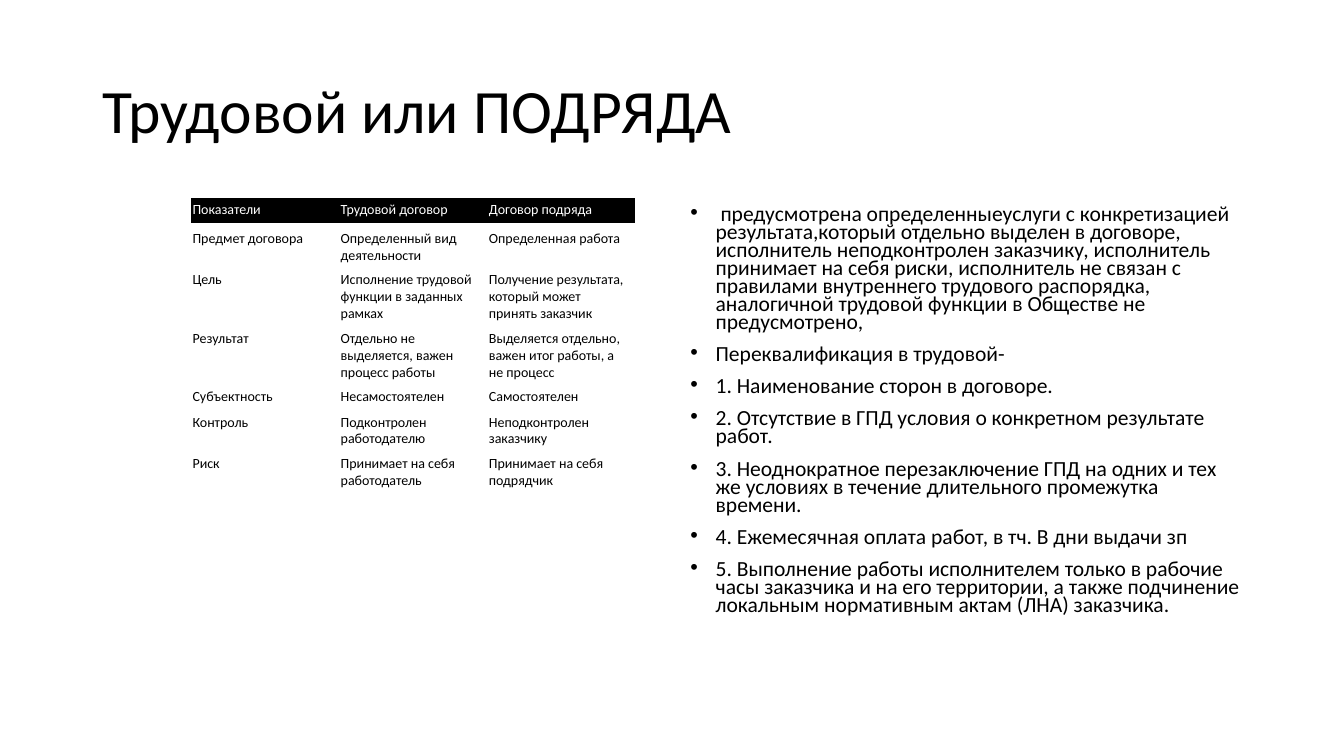
from pptx import Presentation
from pptx.dml.color import RGBColor
from pptx.enum.text import MSO_ANCHOR
from pptx.oxml.ns import qn
from pptx.util import Pt
from lxml import etree

PX = 9144
MIDDLE, TOP = MSO_ANCHOR.MIDDLE, MSO_ANCHOR.TOP
COLORS = {"black": "000000", "white": "FFFFFF"}
NO_STYLE = "{2D5ABB26-0587-4C30-8999-92F81FD0307C}"

ROWS = [
    ("Показатели", "Трудовой договор", "Договор подряда"),
    ("Предмет договора", "Определенный вид деятельности", "Определенная работа"),
    ("Цель", "Исполнение трудовой функции в заданных рамках",
     "Получение результата, который может принять заказчик"),
    ("Результат", "Отдельно не выделяется, важен процесс работы",
     "Выделяется отдельно, важен итог работы, а не процесс"),
    ("Субъектность", "Несамостоятелен", "Самостоятелен"),
    ("Контроль", "Подконтролен работодателю", "Неподконтролен заказчику"),
    ("Риск", "Принимает на себя работодатель", "Принимает на себя подрядчик"),
]
ROW_HEIGHTS = [25, 41, 58, 58, 25, 41, 41]
COLUMN_WIDTH = 147

POINTS = [
    " предусмотрена определенныеуслуги с конкретизацией результата,который отдельно "
    "выделен в договоре, исполнитель неподконтролен заказчику, исполнитель принимает "
    "на себя риски, исполнитель не связан с правилами внутреннего трудового "
    "распорядка, аналогичной трудовой функции в Обществе не предусмотрено,",
    "Переквалификация в трудовой-",
    "1. Наименование сторон в договоре.",
    "2. Отсутствие в ГПД условия о конкретном результате работ.",
    "3. Неоднократное перезаключение ГПД на одних и тех же условиях в течение "
    "длительного промежутка времени.",
    "4. Ежемесячная оплата работ, в тч. В дни выдачи зп",
    "5. Выполнение работы исполнителем только в рабочие часы заказчика и на его "
    "территории, а также подчинение локальным нормативным актам (ЛНА) заказчика.",
]


def add_text(p, text, size, color="black"):
    r = p.add_run()
    r.text = text
    r.font.name = "Calibri"
    r.font.size = Pt(size)
    r.font.color.rgb = RGBColor.from_string(COLORS[color])


def add_box(left, top, width, height, anchor):
    tf = s.shapes.add_textbox(left * PX, top * PX, width * PX, height * PX).text_frame
    tf.word_wrap = True
    tf.vertical_anchor = anchor
    return tf


prs = Presentation()
prs.slide_width, prs.slide_height = 1333 * PX, 750 * PX
s = prs.slides.add_slide(prs.slide_layouts[6])

p = add_box(92, 40, 1150, 145, MIDDLE).paragraphs[0]
p.line_spacing = 0.9
add_text(p, "Трудовой или ПОДРЯДА", 44)

table = s.shapes.add_table(len(ROWS), 3, 189 * PX, 196 * PX,
                           3 * COLUMN_WIDTH * PX, sum(ROW_HEIGHTS) * PX).table
table.first_row = table.horz_banding = False
table._tbl.tblPr.find(qn("a:tableStyleId")).text = NO_STYLE
for column in table.columns:
    column.width = COLUMN_WIDTH * PX
for i, (texts, height) in enumerate(zip(ROWS, ROW_HEIGHTS)):
    table.rows[i].height = height * PX
    header = i == 0
    fmt = {
        "vertical_anchor": MIDDLE if header else TOP,
        "margin_left": 2 * PX,
        "margin_top": (4 if header else 7) * PX,
        "margin_right": 7 * PX,
        "margin_bottom": (4 if header else 1) * PX,
    }
    for j, text in enumerate(texts):
        cell = table.cell(i, j)
        for name, value in fmt.items():
            setattr(cell, name, value)
        cell.fill.solid()
        cell.fill.fore_color.rgb = RGBColor.from_string(COLORS["black" if header else "white"])
        add_text(cell.text_frame.paragraphs[0], text, 10, "white" if header else "black")

tf = add_box(675, 200, 567, 476, TOP)
for i, text in enumerate(POINTS):
    p = tf.add_paragraph() if i else tf.paragraphs[0]
    p.line_spacing = 0.7
    p.space_before = Pt(10)
    add_text(p, text, 15.4)
    pPr = p._p.get_or_add_pPr()
    pPr.set("marL", str(25 * PX))
    pPr.set("indent", str(-25 * PX))
    etree.SubElement(pPr, qn("a:buFont")).set("typeface", "Arial")
    etree.SubElement(pPr, qn("a:buChar")).set("char", "•")

prs.save("out.pptx")
